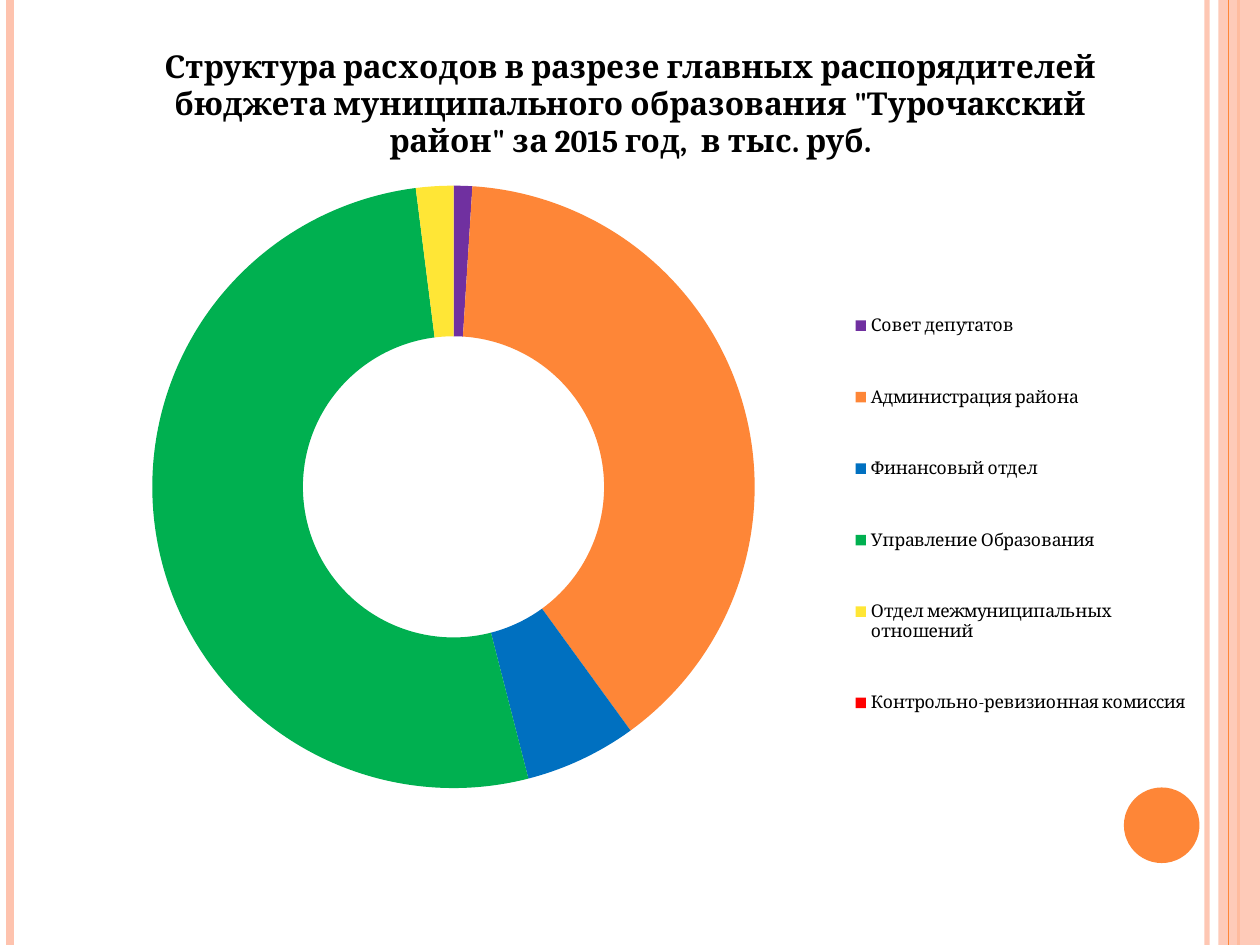
"""Build a slide with a doughnut chart of district budget spending."""
from lxml.etree import SubElement
from pptx import Presentation
from pptx.chart.data import CategoryChartData
from pptx.dml.color import RGBColor
from pptx.enum.chart import XL_CHART_TYPE, XL_LEGEND_POSITION
from pptx.enum.shapes import MSO_CONNECTOR, MSO_SHAPE
from pptx.oxml import parse_xml
from pptx.oxml.ns import nsdecls, qn
from pptx.util import Inches, Pt

TITLE = [
    "Структура расходов в разрезе главных распорядителей",
    "бюджета муниципального образования \"Турочакский район\" за 2015 год,  в тыс. руб.",
]
PARTS = [
    ("Совет депутатов", 1, "7030A0"),
    ("Администрация района", 39, "FE8637"),
    ("Финансовый отдел", 6, "0070C0"),
    ("Управление Образования", 52, "00B050"),
    ("Отдел межмуниципальных отношений", 2, "FFE636"),
    ("Контрольно-ревизионная комиссия", 0, "FF0000"),
]
THEME = {
    "pale": "FEC3AE", "accent": "FE8637", "ink": "000000",
    "title": {"name": "Cambria", "size": Pt(18), "bold": True},
    "body": {"name": "Cambria", "size": Pt(10), "bold": False},
}
SIZE = (10, 7.5)
LINES = [(9.58, "pale", 3, 93), (0.08, "pale", 4.5, 100), (9.83, "accent", 1.5, 100)]
BAND = (9.67, 0, 0.33, 7.5)
EDGE = (9.75, "accent", 0.75, 100)
DOT = (8.92, 6.25, 0.6, 0.6)
CHART = (0.32, 0.17, 9.37, 6.21)
PLOT = {"x": 0.09, "y": 0.21, "w": 0.52, "h": 0.77}
LEGEND = {"x": 0.68, "y": 0.31, "w": 0.3, "h": 0.64}


def fade(item, alpha):
    """Set the opacity of a solid colour in percent."""
    if alpha < 100:
        tone = next(item.iter(qn("a:srgbClr")))
        SubElement(tone, qn("a:alpha")).set("val", str(alpha * 1000))


def style(font, kind):
    """Apply a theme font and the ink colour."""
    for key, value in THEME[kind].items():
        setattr(font, key, value)
    font.color.rgb = RGBColor.from_string(THEME["ink"])


def stripe(slide, left, tone, width, alpha):
    """Draw a full-height vertical line."""
    x = Inches(left)
    line = slide.shapes.add_connector(MSO_CONNECTOR.STRAIGHT, x, 0, x, Inches(SIZE[1]))
    line.line.width = Pt(width)
    line.line.color.rgb = RGBColor.from_string(THEME[tone])
    props = line._element.spPr
    fade(props, alpha)
    SubElement(props, qn("a:effectLst"))


def block(slide, kind, box, tone, alpha=100):
    """Draw a plain filled shape."""
    shape = slide.shapes.add_shape(kind, *map(Inches, box))
    shape.shadow.inherit = False
    shape.fill.solid()
    shape.fill.fore_color.rgb = RGBColor.from_string(THEME[tone])
    shape.line.fill.background()
    fade(shape._element.spPr, alpha)


def layout(box, inner=False):
    """Return a manual chart layout element."""
    rules = {"layoutTarget": "inner"} if inner else {}
    rules.update(xMode="edge", yMode="edge", **box)
    body = "".join(f'<c:{key} val="{value}"/>' for key, value in rules.items())
    return parse_xml(
        f'<c:layout {nsdecls("c")}><c:manualLayout>{body}</c:manualLayout></c:layout>')


def ring(slide):
    """Add the doughnut with its title and legend."""
    data = CategoryChartData()
    data.categories = [name for name, _, _ in PARTS]
    data.add_series("Series 1", [value for _, value, _ in PARTS])
    chart = slide.shapes.add_chart(
        XL_CHART_TYPE.DOUGHNUT, *map(Inches, CHART), data).chart
    style(chart.font, "body")
    chart.has_title = True
    frame = chart.chart_title.text_frame
    for n, text in enumerate(TITLE):
        para = frame.add_paragraph() if n else frame.paragraphs[0]
        run = para.add_run()
        run.text = text
        style(para.font, "title")
        style(run.font, "title")
    chart.has_legend = True
    legend = chart.legend
    legend.position = XL_LEGEND_POSITION.RIGHT
    legend.include_in_layout = True
    style(legend.font, "body")
    plot = chart.plots[0]
    plot.vary_by_categories = True
    plot._element.find(qn("c:holeSize")).set("val", "50")
    for n, (_, _, tone) in enumerate(PARTS):
        part = plot.series[0].points[n].format
        part.fill.solid()
        part.fill.fore_color.rgb = RGBColor.from_string(tone)
        part.line.fill.background()
    area = plot._element.getparent()
    for old in area.findall(qn("c:layout")):
        area.remove(old)
    area.insert(0, layout(PLOT, True))
    key = legend._element
    for old in key.findall(qn("c:layout")):
        key.remove(old)
    key.find(qn("c:legendPos")).addnext(layout(LEGEND))


def main():
    """Assemble and save the slide."""
    deck = Presentation()
    deck.slide_width, deck.slide_height = map(Inches, SIZE)
    slide = deck.slides.add_slide(deck.slide_layouts[6])
    for line in LINES:
        stripe(slide, *line)
    block(slide, MSO_SHAPE.RECTANGLE, BAND, "pale", 87)
    stripe(slide, *EDGE)
    block(slide, MSO_SHAPE.OVAL, DOT, "accent")
    ring(slide)
    deck.save("out.pptx")


if __name__ == "__main__":
    main()
